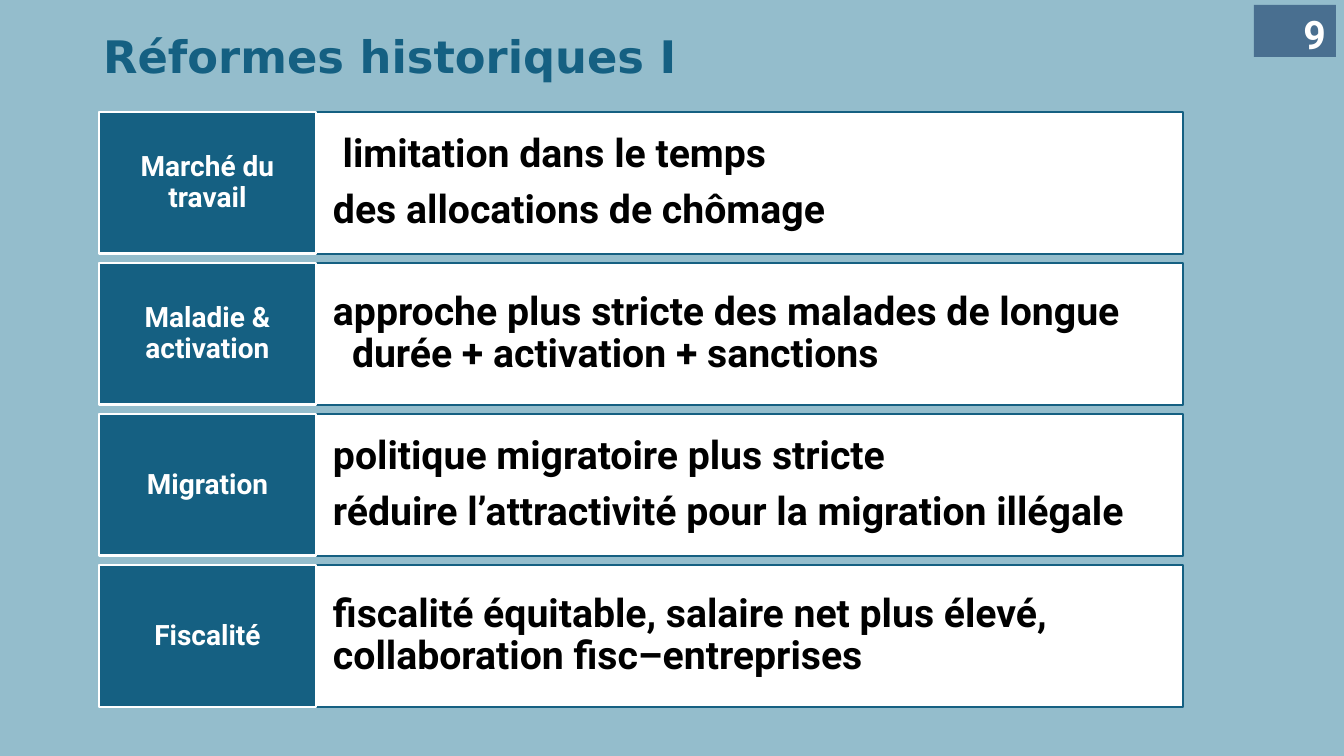
from pptx import Presentation, util as u
from pptx.dml.color import RGBColor
from pptx.enum import shapes, text

COLOURS = {"back": "94BDCC", "teal": "156082", "slate": "496F90",
           "white": "FFFFFF", "black": "000000"}
PX = 914400 / 100.8

# Each reform: label, statements, hanging indent in px, space after in points
REFORMS = [
    ("Marché du travail",
     [" limitation dans le temps", "des allocations de chômage"], 0, 10),
    ("Maladie & activation",
     ["approche plus stricte des malades de longue durée + activation + sanctions"], 19, 4),
    ("Migration",
     ["politique migratoire plus stricte",
      "réduire l’attractivité pour la migration illégale"], 0, 10),
    ("Fiscalité",
     ["fiscalité équitable, salaire net plus élevé, collaboration fisc–entreprises"], 0, 10),
]


def px(length):
    return u.Emu(round(length * PX))


def colour(name):
    return RGBColor.from_string(COLOURS[name])


class Page:
    def __init__(self, deck):
        self.slide = deck.slides.add_slide(deck.slide_layouts[5])
        fill = self.slide.background.fill
        fill.solid()
        fill.fore_color.rgb = colour("back")

    def label(self, box, lines, size, ink, font="Roboto", align=text.PP_ALIGN.LEFT,
              spacing=0.9, after=0, hang=0):
        frame = box.text_frame
        frame.text = "\n".join(lines)
        frame.word_wrap = True
        frame.auto_size = text.MSO_AUTO_SIZE.NONE
        for para in frame.paragraphs:
            para.alignment = align
            para.line_spacing = spacing
            para.space_before = u.Pt(0)
            para.space_after = u.Pt(after)
            if hang:
                props = para._p.get_or_add_pPr()
                props.set("marL", str(px(hang)))
                props.set("indent", str(-px(hang)))
            for span in para.runs:
                span.font.name = font
                span.font.size = u.Pt(size)
                span.font.bold = True
                span.font.color.rgb = colour(ink)

    def title(self, words, left, top, width, height):
        box = self.slide.shapes.title
        box.left, box.top, box.width, box.height = map(px, (left, top, width, height))
        self.label(box, [words], 32, "teal", font="DejaVu Sans")
        box.text_frame.vertical_anchor = text.MSO_ANCHOR.MIDDLE

    def panel(self, area, fill, line=None, weight=0, margins=(10, 5),
              anchor=text.MSO_ANCHOR.MIDDLE):
        box = self.slide.shapes.add_shape(shapes.MSO_SHAPE.RECTANGLE, *map(px, area))
        box.shadow.inherit = False
        box.fill.solid()
        box.fill.fore_color.rgb = colour(fill)
        if line:
            box.line.color.rgb = colour(line)
            box.line.width = u.Pt(weight)
        else:
            box.line.fill.background()
        frame = box.text_frame
        frame.margin_left = frame.margin_right = px(margins[0])
        frame.margin_top = frame.margin_bottom = px(margins[1])
        frame.vertical_anchor = anchor
        return box


def main():
    deck = Presentation()
    deck.slide_width, deck.slide_height = px(1344), px(756)
    page = Page(deck)

    # Title
    page.title("Réformes historiques I", 93, 13, 1159, 91)

    # Reform rows: statement panel, then its label
    left, top, label_width, panel_width, height, pitch = 99, 112, 217, 867, 142, 151
    for row, (name, statements, hang, after) in enumerate(REFORMS):
        y = top + row * pitch
        panel = page.panel((left + label_width, y, panel_width, height),
                           "white", "teal", 1.5, (17, 8))
        page.label(panel, statements, 28, "black", after=after, hang=hang)
        tag = page.panel((left, y, label_width, height), "teal", "white", 2, (11, 14))
        page.label(tag, [name], 20, "white", align=text.PP_ALIGN.CENTER)

    # Page number
    number = page.panel((1254, 5, 82, 52), "slate", anchor=text.MSO_ANCHOR.TOP)
    page.label(number, ["9"], 28, "white", align=text.PP_ALIGN.RIGHT, spacing=1.0)

    deck.save("out.pptx")


if __name__ == "__main__":
    main()
